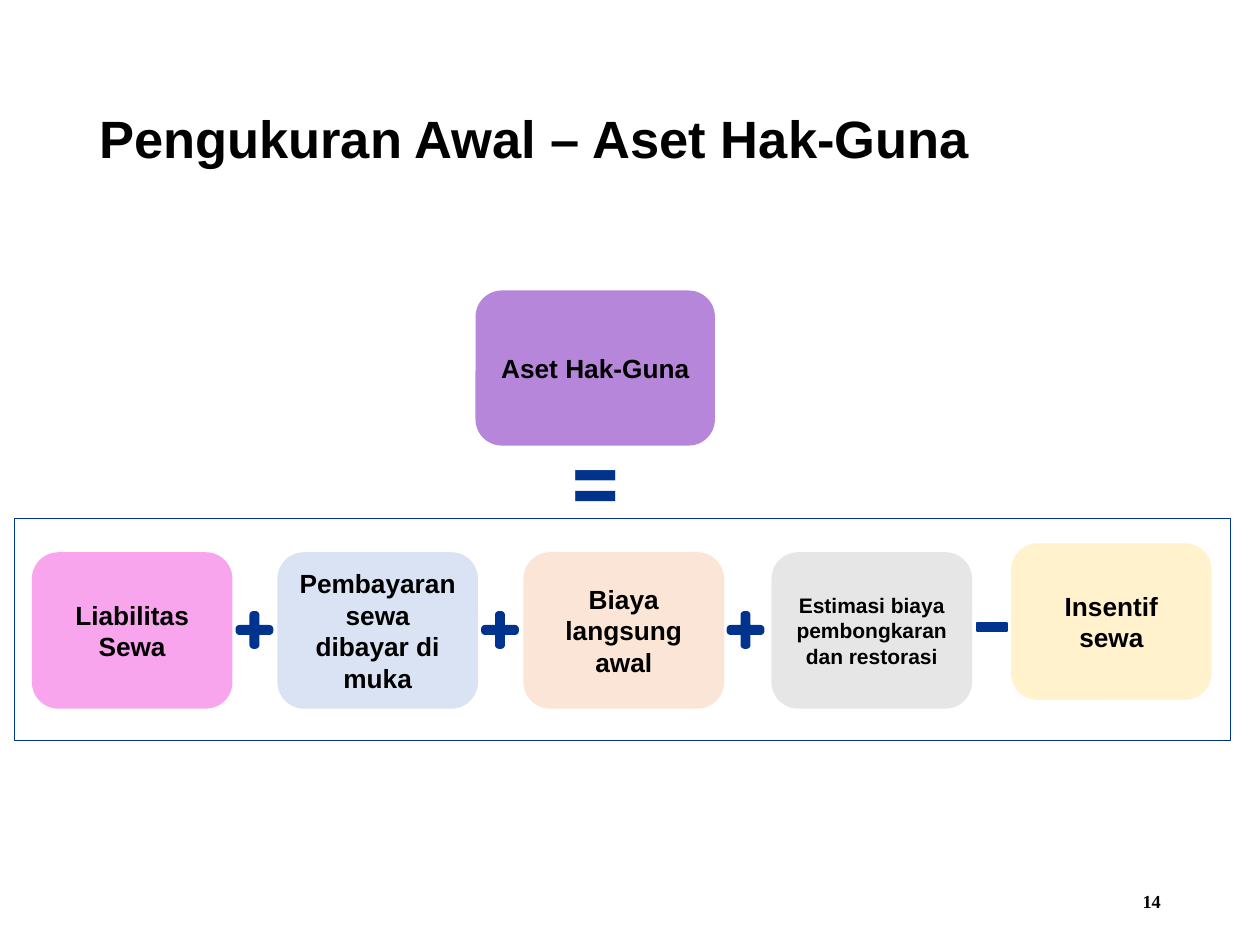
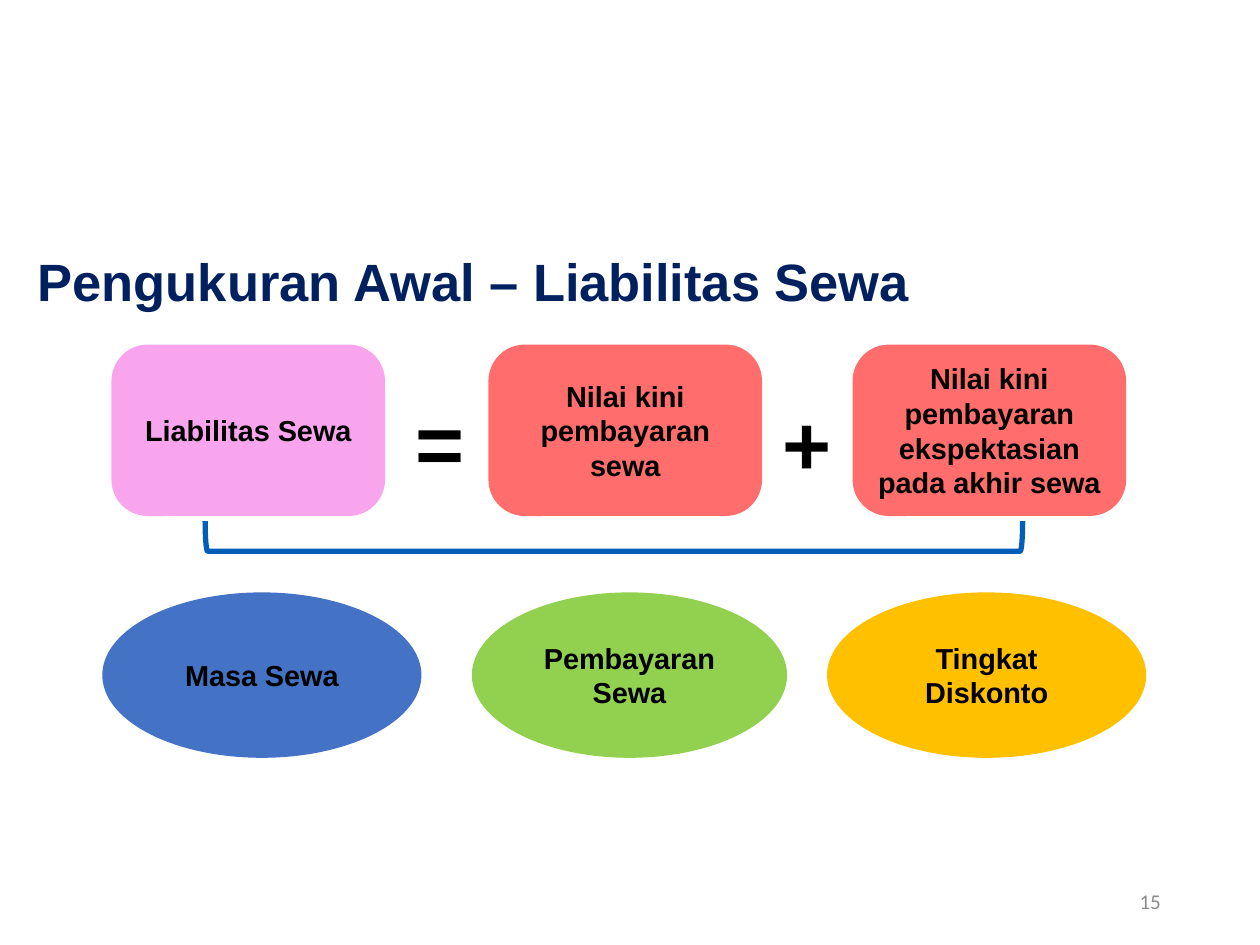
from math import cos, pi, sin

from pptx import Presentation
from pptx.dml.color import RGBColor
from pptx.enum.shapes import MSO_SHAPE as Preset
from pptx.enum.text import MSO_ANCHOR as Anchor, PP_ALIGN as Align
from pptx.util import Cm, Pt

BLACK = RGBColor(0x00, 0x00, 0x00)
GREY = RGBColor(0x8C, 0x8C, 0x8C)
NAVY = RGBColor(0x00, 0x20, 0x60)
OPERATOR_BLUE = RGBColor(0x00, 0x33, 0x8D)
BRACKET_BLUE = RGBColor(0x00, 0x5E, 0xB8)
PURPLE = RGBColor(0xB6, 0x86, 0xDA)
PINK = RGBColor(0xF9, 0xA5, 0xED)
PALE_BLUE = RGBColor(0xDA, 0xE3, 0xF3)
PEACH = RGBColor(0xFB, 0xE5, 0xD6)
SILVER = RGBColor(0xE7, 0xE6, 0xE6)
CREAM = RGBColor(0xFF, 0xF2, 0xCC)
CORAL = RGBColor(0xFF, 0x6D, 0x6D)
BLUE = RGBColor(0x44, 0x72, 0xC4)
GREEN = RGBColor(0x92, 0xD0, 0x50)
AMBER = RGBColor(0xFF, 0xC0, 0x00)


def write(frame, text, size, color=BLACK, font="Arial", bold=True,
          align=Align.CENTER, anchor=Anchor.MIDDLE, wrap=True, inset=True):
    frame.text = text
    frame.word_wrap = wrap
    frame.vertical_anchor = anchor
    if not inset:
        frame.margin_left = frame.margin_right = 0
        frame.margin_top = frame.margin_bottom = 0
    paragraph = frame.paragraphs[0]
    paragraph.alignment = align
    for run in paragraph.runs:
        run.font.name = font
        run.font.size = Pt(size)
        run.font.bold = bold
        run.font.color.rgb = color
    return paragraph


def add_label(slide, box, text, size, **style):
    label = slide.shapes.add_textbox(*map(Cm, box))
    return write(label.text_frame, text, size, **style)


def add_title(slide, box, text, **style):
    return add_label(slide, box, text, 30, align=Align.LEFT, **style)


def add_page_number(slide, number, size, **style):
    add_label(slide, (17.93, 17.65, 5.72, 1.02), number, size,
              align=Align.RIGHT, **style)


def add_sign(slide, left, top, sign, **style):
    paragraph = add_label(slide, (left, top, 1.47, 1.52), sign, 48,
                          anchor=Anchor.TOP, inset=False, **style)
    paragraph.space_after = Pt(2.2)


def add_filled(slide, preset, box, color, line_width=1):
    shape = slide.shapes.add_shape(preset, *map(Cm, box))
    shape.shadow.inherit = False
    shape.fill.solid()
    shape.fill.fore_color.rgb = color
    shape.line.color.rgb = color
    shape.line.width = Pt(line_width)
    return shape


def add_outline(slide, preset, box, color, line_width):
    shape = slide.shapes.add_shape(preset, *map(Cm, box))
    shape.shadow.inherit = False
    shape.fill.background()
    shape.line.color.rgb = color
    shape.line.width = Pt(line_width)
    return shape


def add_plus(slide, center_x, center_y):
    reach, half_arm, radius, steps = 0.38, 0.1, 0.08, 6
    arm = [(half_arm, -half_arm)]
    for side in (-1, 1):
        for step in range(steps + 1):
            angle = pi / 2 * (step / steps + (side - 1) / 2)
            arm.append((reach - radius + radius * cos(angle),
                        side * (half_arm - radius) + radius * sin(angle)))
    outline = []
    for _ in range(4):
        outline += [(Cm(center_x + x), Cm(center_y + y)) for x, y in arm]
        arm = [(-y, x) for x, y in arm]
    builder = slide.shapes.build_freeform(*outline[0])
    builder.add_line_segments(outline[1:], close=True)
    plus = builder.convert_to_shape()
    plus.shadow.inherit = False
    plus.fill.solid()
    plus.fill.fore_color.rgb = OPERATOR_BLUE
    plus.line.fill.background()


def build_right_of_use_asset(slide):
    title = add_title(slide, (1.75, 1.02, 21.89, 3.68),
                      "Pengukuran Awal – Aset Hak-Guna")
    title.line_spacing = 0.9
    add_page_number(slide, "14", 10.5, font="Times New Roman")
    add_outline(slide, Preset.RECTANGLE, (0.3, 10.46, 24.51, 4.47),
                OPERATOR_BLUE, 0.75)
    asset = add_filled(slide, Preset.ROUNDED_RECTANGLE,
                       (9.6, 5.87, 4.8, 3.1), PURPLE, 0.75)
    write(asset.text_frame, "Aset Hak-Guna", 15, inset=False)
    for index in range(3):
        add_plus(slide, 5.13 + 4.95 * index, 12.7)
    add_filled(slide, Preset.MATH_MINUS, (19.58, 12.32, 0.84, 0.64),
               OPERATOR_BLUE)
    components = [
        (0.66, 11.15, PINK, "Liabilitas Sewa", 15),
        (5.61, 11.15, PALE_BLUE, "Pembayaran sewa dibayar di muka", 15),
        (10.57, 11.15, PEACH, "Biaya langsung awal", 15),
        (15.57, 11.15, SILVER, "Estimasi biaya pembongkaran dan restorasi", 12),
        (20.4, 10.97, CREAM, "Insentif sewa", 15),
    ]
    for left, top, color, text, size in components:
        component = add_filled(slide, Preset.ROUNDED_RECTANGLE,
                               (left, top, 4.01, 3.12), color)
        write(component.text_frame, text, size)
    add_sign(slide, 11.28, 8.69, "=", font="Montserrat", color=OPERATOR_BLUE)


def build_lease_liability(slide):
    add_title(slide, (0.51, 4.9, 18.26, 1.55),
              "Pengukuran Awal – Liabilitas Sewa",
              color=NAVY, anchor=Anchor.TOP, wrap=False)
    terms = [
        (2.26, PINK, "Liabilitas Sewa"),
        (9.86, CORAL, "Nilai kini pembayaran sewa"),
        (17.2, CORAL, "Nilai kini pembayaran ekspektasian pada akhir sewa"),
    ]
    for left, color, text in terms:
        term = add_filled(slide, Preset.ROUNDED_RECTANGLE,
                          (left, 6.96, 5.49, 3.43), color, 0.75)
        term.adjustments[0] = 0.21
        write(term.text_frame, text, 16.5)
    add_sign(slide, 8.13, 7.87, "=")
    add_sign(slide, 15.54, 7.9, "+")
    bracket = add_outline(slide, Preset.RIGHT_BRACKET,
                          (12.07, 2.57, 0.61, 16.48), BRACKET_BLUE, 3)
    bracket.rotation = 90
    factors = [
        (2.08, 6.4, BLUE, "Masa Sewa"),
        (9.53, 6.32, GREEN, "Pembayaran Sewa"),
        (16.69, 6.4, AMBER, "Tingkat Diskonto"),
    ]
    for left, width, color, text in factors:
        factor = add_filled(slide, Preset.OVAL,
                            (left, 11.96, width, 3.3), color)
        write(factor.text_frame, text, 16.5)
    add_page_number(slide, "15", 12, font="Calibri", color=GREY, bold=False)


def main():
    deck = Presentation()
    deck.slide_width, deck.slide_height = Cm(25.4), Cm(19.05)
    blank = deck.slide_layouts[6]
    for build in (build_right_of_use_asset, build_lease_liability):
        build(deck.slides.add_slide(blank))
    deck.save("out.pptx")


if __name__ == "__main__":
    main()
